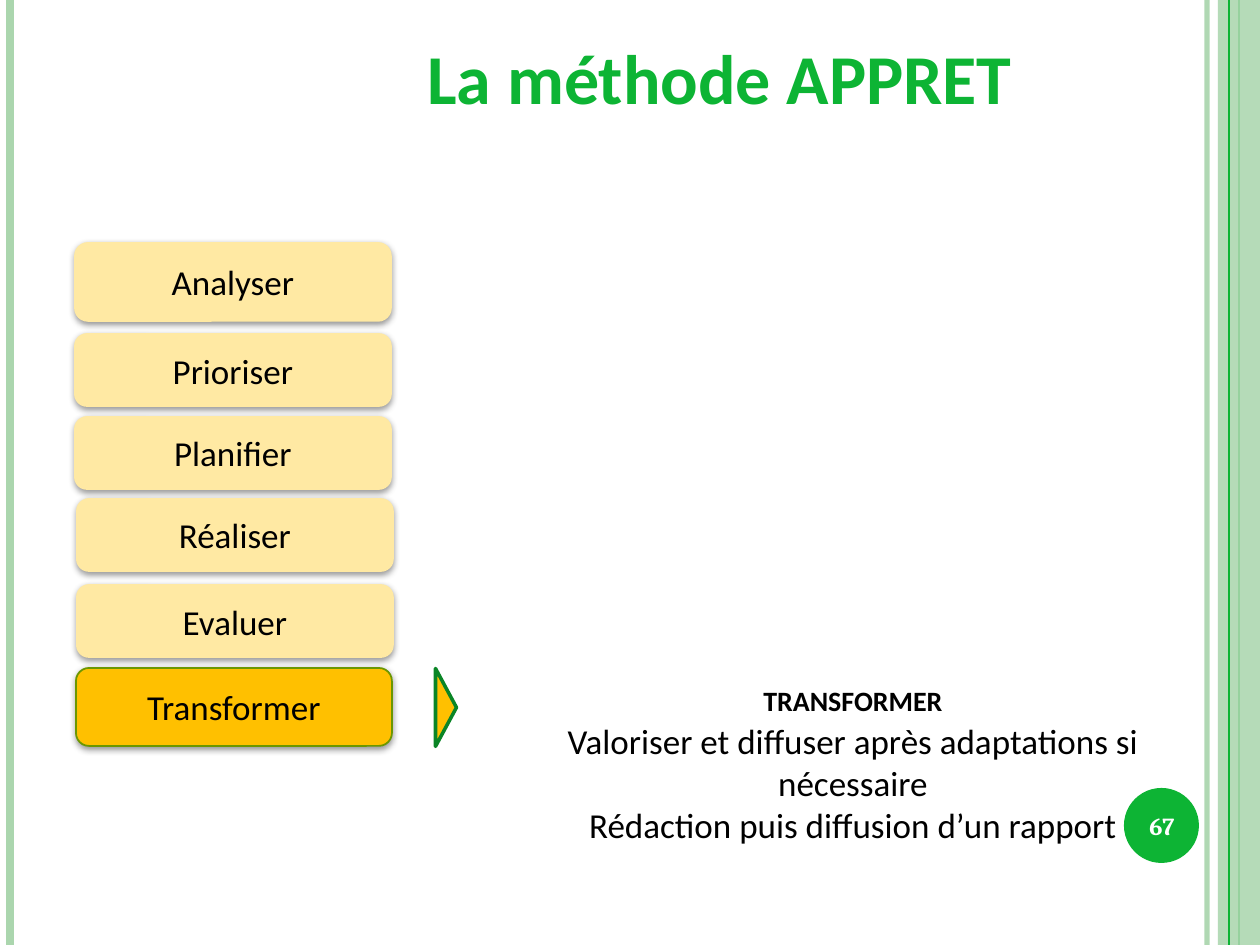
from lxml import etree
from pptx import Presentation
from pptx.dml.color import RGBColor
from pptx.enum.shapes import MSO_CONNECTOR, MSO_SHAPE
from pptx.enum.text import MSO_ANCHOR, PP_ALIGN
from pptx.oxml import parse_xml
from pptx.oxml.ns import nsdecls, qn
from pptx.util import Emu, Pt

PX = 914400 // 126
WIDTH, HEIGHT = 1260, 945
GREEN, PALE_GREEN, CREAM, AMBER = "0DB434", "ABD6AE", "FFE9A3", "FFC000"

TITLE = "La méthode APPRET"
STEPS = [  # label, left, top, height
    ("Analyser", 75, 243, 78),
    ("Prioriser", 75, 334, 72),
    ("Planifier", 75, 417, 72),
    ("Réaliser", 77, 499, 72),
    ("Evaluer", 77, 585, 72),
    ("Transformer", 76, 668, 78),
]
STEP_WIDTH = 316
DETAILS = [
    "transformer",
    "Valoriser et diffuser après adaptations si nécessaire",
    "Rédaction puis diffusion d’un rapport",
]
BACK_RULES = [  # x, colour, points, opacity in %
    (1207, PALE_GREEN, 3, 93),
    (10, PALE_GREEN, 4.5, 100),
    (1239, GREEN, 1.5, 100),
]
FRONT_RULES = [(1229, GREEN, 0.75, 100)]


def px(*values):
    return [Emu(v * PX) for v in values]


def rgb(value):
    return RGBColor.from_string(value)


def set_opacity(sp, percent):
    color = next(sp._element.spPr.iter(qn("a:srgbClr")))
    etree.SubElement(color, qn("a:alpha")).set("val", str(percent * 1000))


def add_rule(x, color, width, opacity):
    line = slide.shapes.add_connector(MSO_CONNECTOR.STRAIGHT, *px(x, 0, x, HEIGHT))
    line.line.color.rgb = rgb(color)
    line.line.width = Pt(width)
    etree.SubElement(line._element.spPr, qn("a:effectLst"))
    if opacity < 100:
        set_opacity(line, opacity)


def add_shape(kind, box, fill, line=None, width=1):
    sp = slide.shapes.add_shape(kind, *px(*box))
    sp.shadow.inherit = False
    sp.fill.solid()
    sp.fill.fore_color.rgb = rgb(fill)
    if line:
        sp.line.color.rgb = rgb(line)
        sp.line.width = Pt(width)
    else:
        sp.line.fill.background()
    return sp


def write(sp, lines, size, color="000000", font="Calibri", bold=False,
          anchor=MSO_ANCHOR.MIDDLE):
    tf = sp.text_frame
    tf.word_wrap = True
    tf.vertical_anchor = anchor
    tf.text = "\n".join(lines)
    for p in tf.paragraphs:
        p.alignment = PP_ALIGN.CENTER
        for r in p.runs:
            r.font.name, r.font.size, r.font.bold = font, Pt(size), bold
            r.font.color.rgb = rgb(color)
    return tf


def add_text(box, lines, size, **style):
    return write(slide.shapes.add_textbox(*px(*box)), lines, size, **style)


def add_soft_shadow(sp):
    sp._element.spPr.find(qn("a:effectLst")).append(parse_xml(
        f'<a:outerShdw {nsdecls("a")} blurRad="50800" dist="20320" dir="5400000" '
        'rotWithShape="0"><a:srgbClr val="000000"><a:alpha val="42000"/>'
        '</a:srgbClr></a:outerShdw>'))


def set_corner_gradient(sp):
    """Fill with a hard-edged circle of amber spreading from the lower left."""
    stops = [(0, AMBER), (100, AMBER), (100, "374D00")]
    stop_xml = "".join(f'<a:gs pos="{pos * 1000}"><a:srgbClr val="{color}"/></a:gs>'
                       for pos, color in stops)
    solid = sp._element.spPr.find(qn("a:solidFill"))
    solid.getparent().replace(solid, parse_xml(
        f'<a:gradFill {nsdecls("a")} rotWithShape="1"><a:gsLst>{stop_xml}</a:gsLst>'
        '<a:path path="circle"><a:fillToRect t="100000" r="100000"/></a:path>'
        '</a:gradFill>'))


prs = Presentation()
prs.slide_width, prs.slide_height = px(WIDTH, HEIGHT)
slide = prs.slides.add_slide(prs.slide_layouts[6])

for rule in BACK_RULES:
    add_rule(*rule)
set_opacity(add_shape(MSO_SHAPE.RECTANGLE, (1218, 0, 42, HEIGHT), PALE_GREEN), 87)
for rule in FRONT_RULES:
    add_rule(*rule)
add_shape(MSO_SHAPE.OVAL, (1124, 788, 75, 75), GREEN)

add_text((234, 24, 971, 101), [TITLE], 40, color=GREEN, bold=True,
         anchor=MSO_ANCHOR.BOTTOM)

for label, left, top, height in STEPS:
    current = label == STEPS[-1][0]
    step = add_shape(MSO_SHAPE.ROUNDED_RECTANGLE, (left, top, STEP_WIDTH, height),
                     CREAM, "6B9700" if current else CREAM)
    add_soft_shadow(step)
    if current:
        set_corner_gradient(step)
    write(step, [label], 20)

details = add_text((501, 656, 704, 210), DETAILS, 20)
heading = details.paragraphs[0].runs[0].font
heading.bold = True
heading._element.set("cap", "small")

pointer = add_shape(MSO_SHAPE.ISOSCELES_TRIANGLE, (407, 697, 78, 21), AMBER, "0A8526", 2)
pointer.rotation = 90

add_text((1120, 790, 84, 72), ["67"], 14, color="FFFFFF", font="Cambria", bold=True)

prs.save("out.pptx")
